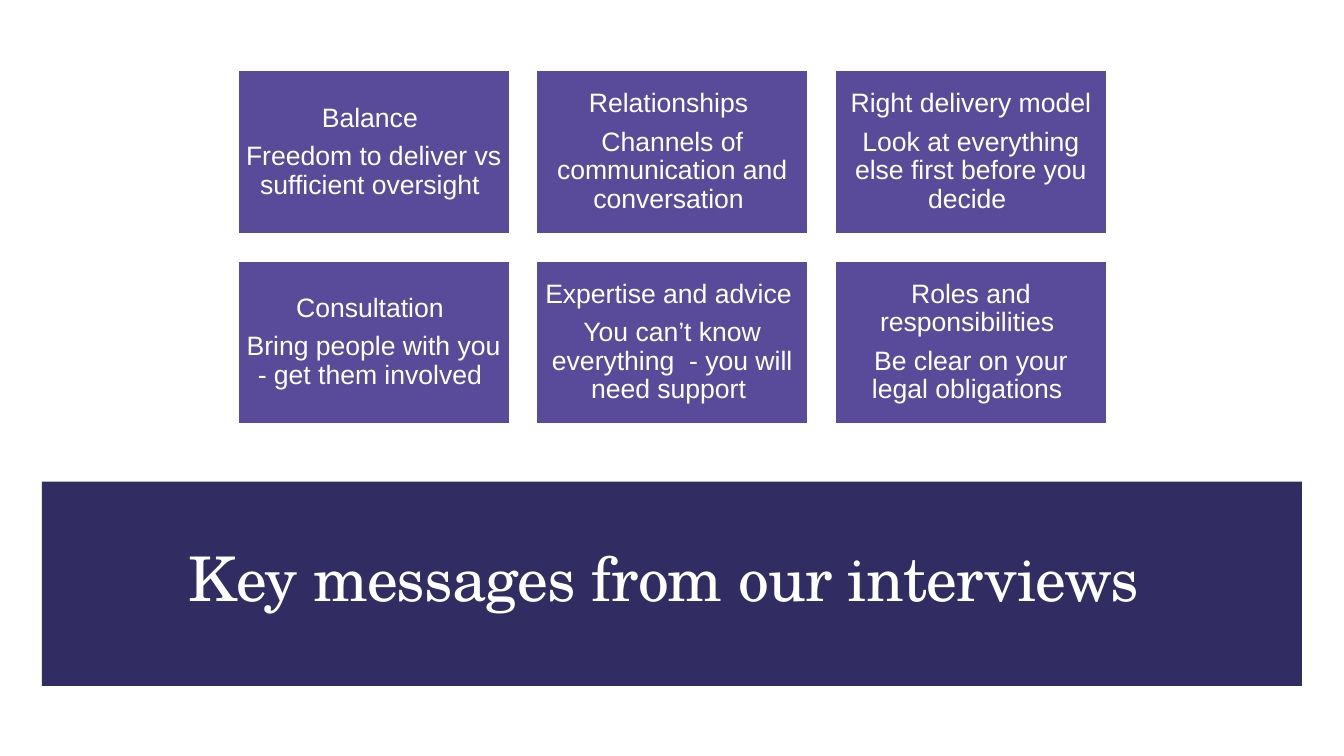
"""Build the slide of six key messages above a title band."""
from pptx import Presentation
from pptx.dml.color import RGBColor
from pptx.enum.shapes import MSO_SHAPE
from pptx.enum.text import MSO_ANCHOR, PP_ALIGN
from pptx.util import Pt

TITLE = "Key messages from our interviews "
MESSAGES = [
    ("Balance ", "Freedom to deliver vs sufficient oversight "),
    ("Relationships ", "Channels of communication and conversation "),
    ("Right delivery model", "Look at everything else first before you decide "),
    ("Consultation ", "Bring people with you - get them involved "),
    ("Expertise and advice ", "You can’t know everything  - you will need support "),
    ("Roles and responsibilities ", "Be clear on your legal obligations "),
]
WHITE, NAVY, PURPLE = "FFFFFF", "312C62", "5A4B9A"
COLUMNS = 3
GRID_LEFT, GRID_TOP = 170, 50.5
CARD_WIDTH, CARD_HEIGHT, GAP = 193.7, 116.3, 19.6
BAND_BOX = (30, 344, 900, 146)
TITLE_BOX = (44, 362, 872.5, 107.5)


def color(hex_value):
    return RGBColor.from_string(hex_value)


def add_rectangle(slide, box, fill, line=None):
    shape = slide.shapes.add_shape(MSO_SHAPE.RECTANGLE, *map(Pt, box))
    shape.shadow.inherit = False
    shape.fill.solid()
    shape.fill.fore_color.rgb = color(fill)
    if line:
        shape.line.color.rgb = color(line)
        shape.line.width = Pt(0.85)
    else:
        shape.line.fill.background()
    return shape


def write_text(shape, lines, size, font, inset=None, space_after=0, spacing=None):
    frame = shape.text_frame
    frame.word_wrap = True
    frame.vertical_anchor = MSO_ANCHOR.MIDDLE
    if inset is not None:
        frame.margin_left = frame.margin_right = Pt(inset)
        frame.margin_top = frame.margin_bottom = Pt(inset)
    for index, line in enumerate(lines):
        paragraph = frame.add_paragraph() if index else frame.paragraphs[0]
        paragraph.alignment = PP_ALIGN.CENTER
        paragraph.line_spacing = 0.9
        paragraph.space_after = Pt(space_after)
        run = paragraph.add_run()
        run.text = line
        run.font.size = Pt(size)
        run.font.name = font
        run.font.color.rgb = color(WHITE)
        if spacing is not None:
            run._r.get_or_add_rPr().set("spc", str(round(spacing * 100)))


def main():
    presentation = Presentation()
    presentation.slide_width, presentation.slide_height = Pt(960), Pt(540)
    slide = presentation.slides.add_slide(presentation.slide_layouts[6])

    add_rectangle(slide, BAND_BOX, NAVY)
    title = slide.shapes.add_textbox(*map(Pt, TITLE_BOX))
    write_text(title, [TITLE], size=44, font="TeX Gyre Schola", spacing=-0.6)

    for index, message in enumerate(MESSAGES):
        row, column = divmod(index, COLUMNS)
        left = GRID_LEFT + column * (CARD_WIDTH + GAP)
        top = GRID_TOP + row * (CARD_HEIGHT + GAP)
        card = add_rectangle(slide, (left, top, CARD_WIDTH, CARD_HEIGHT), PURPLE, WHITE)
        write_text(card, message, size=19, font="Arial", inset=5.7, space_after=6.65)

    presentation.save("out.pptx")


if __name__ == "__main__":
    main()
